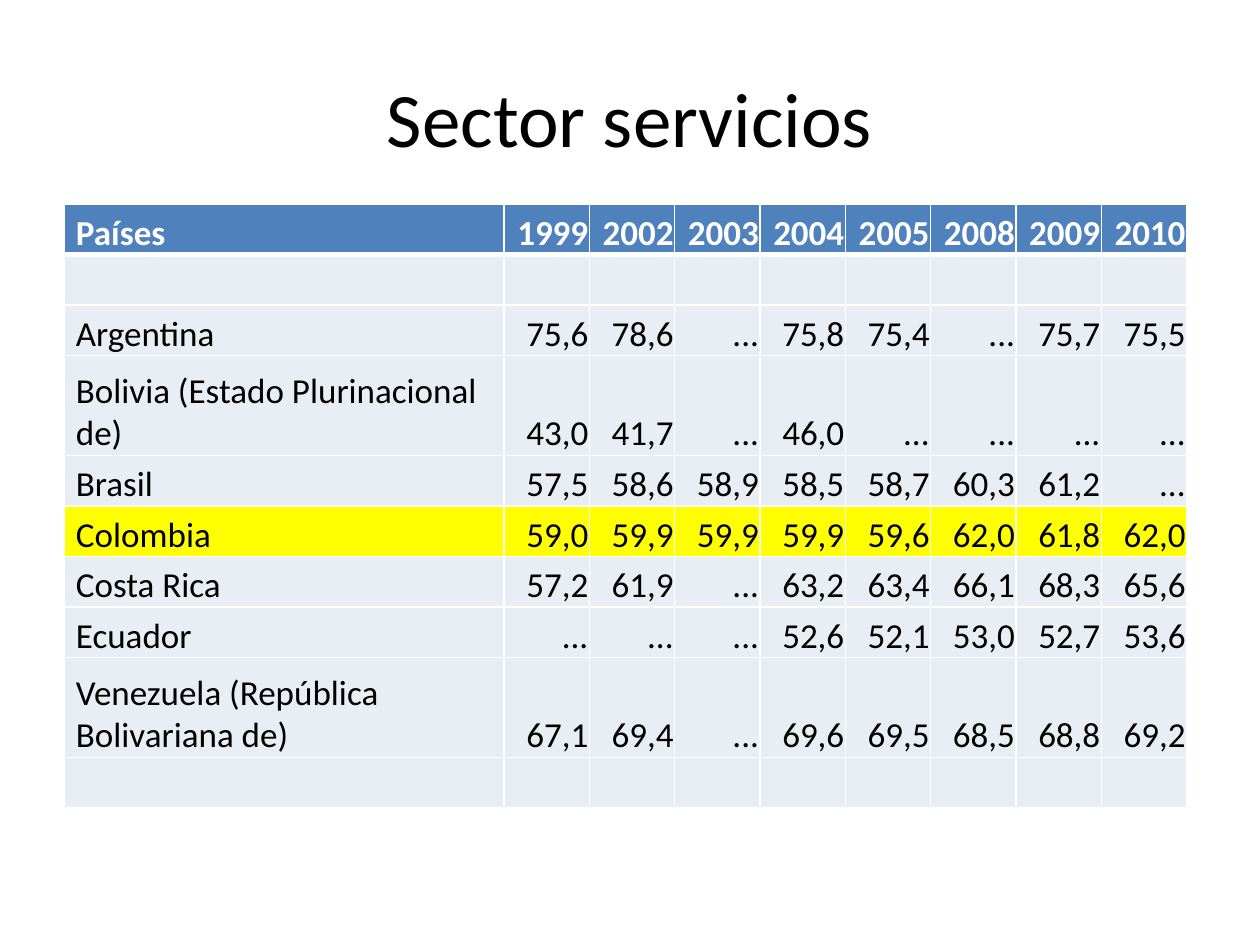
from lxml import etree
from pptx import Presentation
from pptx import util as u
from pptx.dml.color import RGBColor
from pptx.enum import text
from pptx.oxml import ns

COLORS = {"black": "000000", "white": "FFFFFF", "header": "4F81BD",
          "body": "E9EDF4", "highlight": "FFFF00"}
ROWS = [
    ["Países", "1999", "2002", "2003", "2004", "2005", "2008", "2009", "2010"],
    [""] * 9,
    ["Argentina", "75,6", "78,6", "...", "75,8", "75,4", "...", "75,7", "75,5"],
    ["Bolivia (Estado Plurinacional de)", "43,0", "41,7", "...", "46,0", "...", "...", "...", "..."],
    ["Brasil", "57,5", "58,6", "58,9", "58,5", "58,7", "60,3", "61,2", "..."],
    ["Colombia", "59,0", "59,9", "59,9", "59,9", "59,6", "62,0", "61,8", "62,0"],
    ["Costa Rica", "57,2", "61,9", "...", "63,2", "63,4", "66,1", "68,3", "65,6"],
    ["Ecuador", "...", "...", "...", "52,6", "52,1", "53,0", "52,7", "53,6"],
    ["Venezuela (República Bolivariana de)", "67,1", "69,4", "...", "69,6", "69,5", "68,5", "68,8", "69,2"],
    [""] * 9,
]
WIDTHS = [8.86] + [1.72] * 8
HEIGHTS = [2.01 if "(" in row[0] else 1.02 for row in ROWS]


def write(p, value, size, color, bold=False):
    r = p.add_run()
    r.text = value
    for name, val in {"name": "Calibri", "size": u.Pt(size), "bold": bold}.items():
        setattr(r.font, name, val)
    r.font.color.rgb = RGBColor.from_string(COLORS[color])


def border(cell, side, width):
    ln = etree.SubElement(cell._tc.get_or_add_tcPr(), ns.qn(f"a:ln{side}"), w=str(u.Pt(width)))
    fill = etree.SubElement(ln, ns.qn("a:solidFill"))
    etree.SubElement(fill, ns.qn("a:srgbClr"), val=COLORS["white"])


prs = Presentation()
prs.slide_width, prs.slide_height = u.Cm(25.4), u.Cm(19.05)
s = prs.slides.add_slide(prs.slide_layouts[6])

sp = s.shapes.add_textbox(u.Cm(1.27), u.Cm(0.76), u.Cm(22.86), u.Cm(3.18))
tf = sp.text_frame
for name, val in {"word_wrap": True, "vertical_anchor": text.MSO_ANCHOR.MIDDLE}.items():
    setattr(tf, name, val)
p = tf.paragraphs[0]
p.alignment = text.PP_ALIGN.CENTER
write(p, "Sector servicios", 44, "black")

table = s.shapes.add_table(len(ROWS), len(WIDTHS), u.Cm(1.3), u.Cm(4.11),
                           u.Cm(sum(WIDTHS)), u.Cm(sum(HEIGHTS))).table
for col, width in zip(table.columns, WIDTHS):
    col.width = u.Cm(width)
for row, height in zip(table.rows, HEIGHTS):
    row.height = u.Cm(height)

for i, row in enumerate(ROWS):
    head = i == 0
    fill = "header" if head else "highlight" if row[0] == "Colombia" else "body"
    for j, value in enumerate(row):
        cell = table.cell(i, j)
        fmt = {"margin_left": u.Cm(0.02 if j else 0.23), "margin_right": u.Cm(0.02),
               "margin_top": u.Cm(0.02), "margin_bottom": 0,
               "vertical_anchor": text.MSO_ANCHOR.BOTTOM}
        for name, val in fmt.items():
            setattr(cell, name, val)
        for side in "LRTB":
            thick = (i, side) in [(0, "B"), (1, "T")]
            border(cell, side, 3 if thick else 1)
        cell.fill.solid()
        cell.fill.fore_color.rgb = RGBColor.from_string(COLORS[fill])
        p = cell.text_frame.paragraphs[0]
        p.alignment = text.PP_ALIGN.RIGHT if j else text.PP_ALIGN.LEFT
        if value:
            write(p, value, 20, "white" if head else "black", head)

prs.save("out.pptx")
